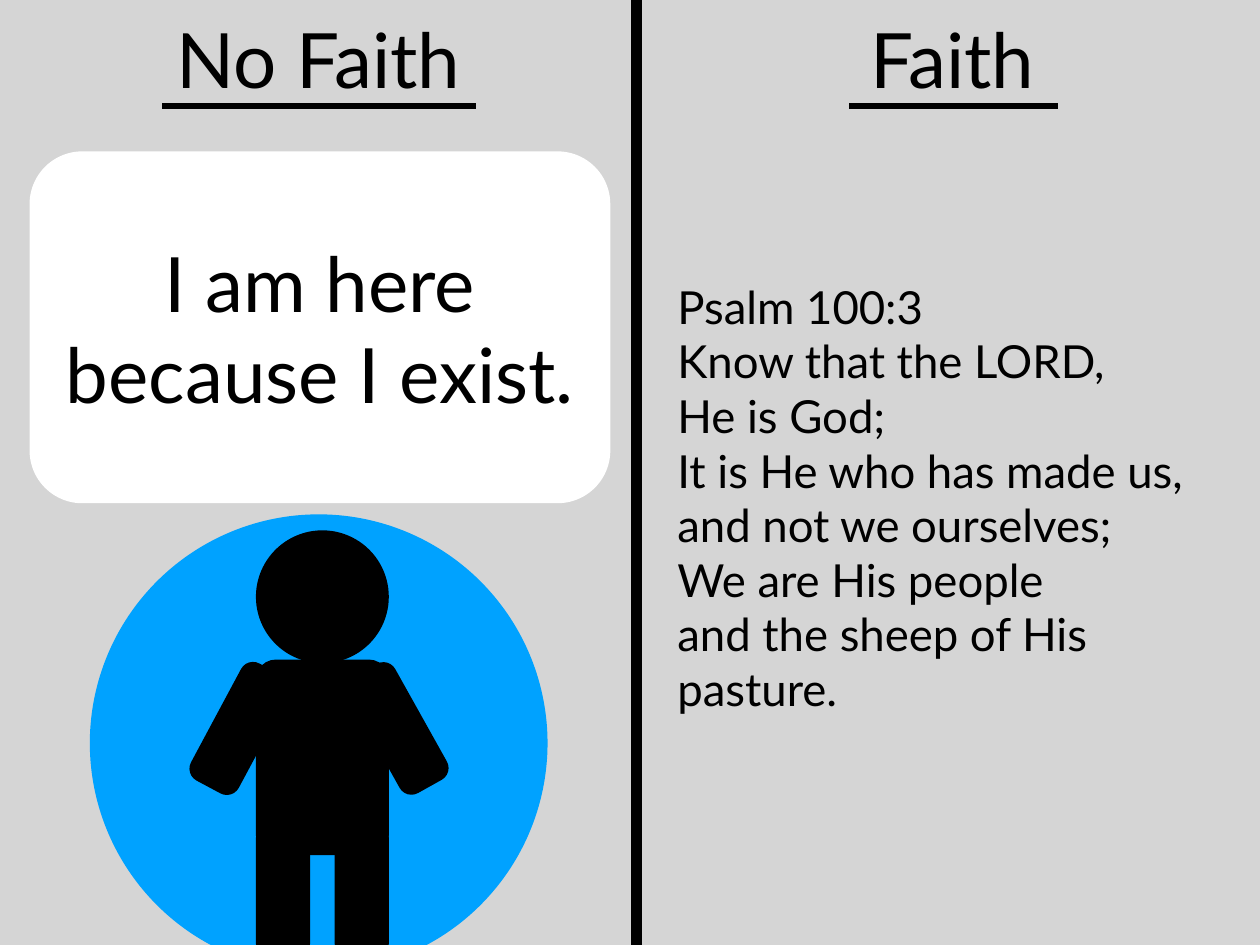
"""Build the two-column slide that contrasts no faith with faith."""
from lxml.etree import SubElement
from pptx import Presentation
from pptx.dml.color import RGBColor
from pptx.enum.shapes import MSO_CONNECTOR, MSO_SHAPE
from pptx.enum.text import MSO_ANCHOR, MSO_AUTO_SIZE, PP_ALIGN
from pptx.oxml.ns import qn
from pptx.util import Pt

COLORS = {"backdrop": "D5D5D5", "circle": "00A2FF", "ink": "000000", "bubble": "FFFFFF"}
COLORS = {name: RGBColor.from_string(value) for name, value in COLORS.items()}
COLUMNS, ROWS = 1024, 768
CELL = Pt(1)
MARGIN = Pt(4.5)
FRAME_FORMAT = {
    "word_wrap": True, "auto_size": MSO_AUTO_SIZE.NONE, "vertical_anchor": MSO_ANCHOR.MIDDLE,
    "margin_left": MARGIN, "margin_right": MARGIN, "margin_top": MARGIN, "margin_bottom": MARGIN,
}


def write_text(shape, lines, size, alignment):
    """Fill a shape with formatted paragraphs."""
    frame = shape.text_frame
    for name, value in FRAME_FORMAT.items():
        setattr(frame, name, value)
    frame.text = "\n".join(lines)
    paragraph_format = {"alignment": alignment, "space_before": Pt(0), "line_spacing": 1.0}
    font_format = {"name": "Lato", "size": Pt(size), "bold": False}
    for paragraph in frame.paragraphs:
        for name, value in paragraph_format.items():
            setattr(paragraph, name, value)
        font = paragraph.runs[0].font
        for name, value in font_format.items():
            setattr(font, name, value)
        font.color.rgb = COLORS["ink"]


def add_filled(shapes, kind, box, color, corner=None, rotation=0):
    """Add a flat shape placed in grid cells."""
    shape = shapes.add_shape(kind, *(length * CELL for length in box))
    shape.shadow.inherit = False
    shape.fill.solid()
    shape.fill.fore_color.rgb = COLORS[color]
    shape.line.fill.background()
    shape.rotation = rotation
    if corner is not None:
        shape.adjustments[0] = corner
    return shape


presentation = Presentation()
presentation.slide_width = COLUMNS * CELL
presentation.slide_height = ROWS * CELL
slide = presentation.slides.add_slide(presentation.slide_layouts[1])
slide.background.fill.solid()
slide.background.fill.fore_color.rgb = COLORS["backdrop"]

add_filled(slide.shapes, MSO_SHAPE.OVAL, (73, 418, 372, 372), "circle")

figure = slide.shapes.add_group_shape()
add_filled(figure.shapes, MSO_SHAPE.OVAL, (208, 431, 108, 108), "ink")
add_filled(figure.shapes, MSO_SHAPE.ROUNDED_RECTANGLE, (208, 536, 108, 159), "ink", 0.15)
for left, top, rotation in ((208, 670, 0), (272, 670, 0), (173, 538, 28.2), (301, 538, 330.8)):
    limb_box = (left, top, 44, 108)
    add_filled(figure.shapes, MSO_SHAPE.ROUNDED_RECTANGLE, limb_box, "ink", 0.25, rotation)

bubble_box = (24, 123, 472, 286)
bubble = add_filled(slide.shapes, MSO_SHAPE.ROUNDED_RECTANGLE, bubble_box, "bubble", 0.15)
write_text(bubble, ["I am here because I exist."], 62, PP_ALIGN.CENTER)

verse_lines = [
    "Psalm 100:3",
    "Know that the LORD,",
    "He is God;",
    "It is He who has made us,",
    "and not we ourselves;",
    "We are His people",
    "and the sheep of His pasture.",
]
faith_heading = slide.shapes.add_textbox(0, 0, CELL, CELL)
verse = slide.placeholders[1]
text_blocks = [
    (slide.shapes.title, (31, 1, 456, 92), ["No Faith"], 62, PP_ALIGN.CENTER),
    (faith_heading, (546, 1, 456, 92), ["Faith"], 62, PP_ALIGN.CENTER),
    (verse, (546, 196, 456, 416), verse_lines, 37, PP_ALIGN.LEFT),
]
for shape, box, lines, size, alignment in text_blocks:
    for side, length in zip(("left", "top", "width", "height"), box):
        setattr(shape, side, length * CELL)
    write_text(shape, lines, size, alignment)

for paragraph in verse.text_frame.paragraphs:
    properties = paragraph._p.get_or_add_pPr()
    properties.set("marL", "0")
    properties.set("indent", "0")
    SubElement(properties, qn("a:buNone"))

rules = [
    ((517, 0, 517, ROWS), 9),
    ((132, 86.5, 387, 86.5), 5),
    ((690, 86.5, 860, 86.5), 5),
]
for ends, weight in rules:
    points = (int(length * CELL) for length in ends)
    rule = slide.shapes.add_connector(MSO_CONNECTOR.STRAIGHT, *points)
    rule.line.width = Pt(weight)
    rule.line.color.rgb = COLORS["ink"]
    SubElement(rule._element.spPr, qn("a:effectLst"))

presentation.save("out.pptx")
